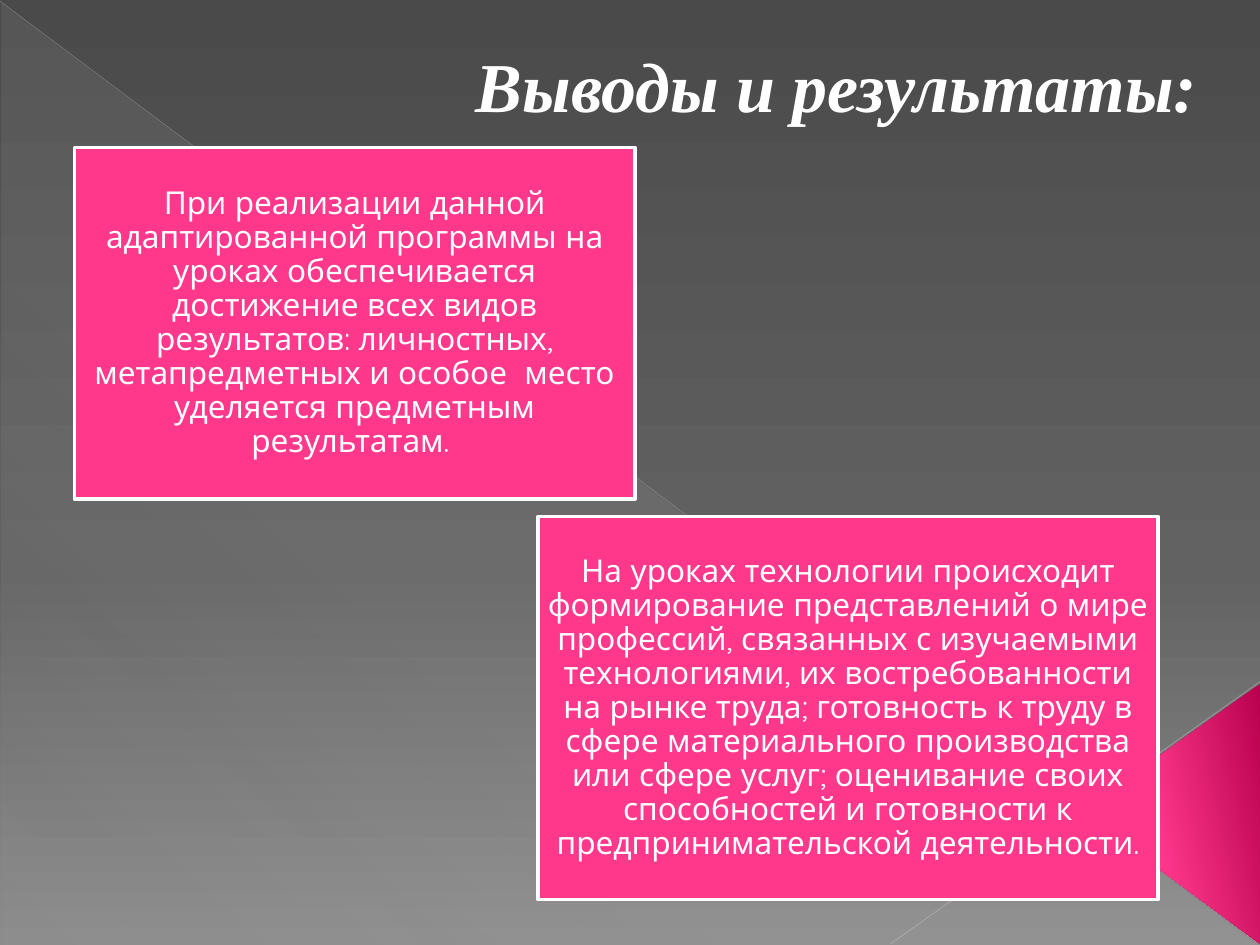
from lxml import etree
from pptx import Presentation
from pptx.dml.color import RGBColor
from pptx.enum import shapes, text
from pptx.oxml.ns import qn
from pptx.util import Inches, Pt

COLORS = {"white": "FFFFFF", "pink": "FF388C", "rose": "B8014E", "blush": "FF9CB9",
          "dark": "4A4A4A", "mid": "626262", "light": "8C8C8C", "veil": "D2D2D2",
          "falling": "BFBFBF", "rising": "C6C6C6"}

TITLE = "Выводы и результаты:"
CARDS = [
    ((0.59, 1.17, 4.45, 2.79),
     "При реализации данной адаптированной программы на уроках обеспечивается "
     "достижение всех видов результатов: личностных, метапредметных и особое  место "
     "уделяется предметным результатам. "),
    ((4.27, 4.1, 4.92, 3.04),
     "На уроках технологии происходит формирование представлений о мире профессий, "
     "связанных с изучаемыми технологиями, их востребованности на рынке труда; "
     "готовность к труду в сфере материального производства или сфере услуг; "
     "оценивание своих способностей и готовности к предпринимательской деятельности."),
]
# start, end, colour, width in points, opacity in percent
DIAGONALS = [((0, 0.01), (9.99, 7.49), "falling", 0.39, 35),
             ((10, 5.41), (7.07, 7.49), "rising", 0.47, 45)]
# position %, colour, opacity %
BACKGROUND_STOPS = [(0, "dark", 100), (60, "mid", 100), (100, "light", 100)]
VEIL_STOPS = [(0, "veil", 10), (70, "veil", 8), (100, "veil", 1)]
CORNER_STOPS = [(0, "rose", 100), (60, "pink", 100), (100, "blush", 100)]


def rgb(name):
    return RGBColor.from_string(COLORS[name])


def set_opacity(color_element, percent):
    etree.SubElement(color_element, qn("a:alpha"), val=str(percent * 1000))


def set_gradient(fill, owner, stops, angle):
    """Fill with any number of stops; the angle runs clockwise."""
    fill.gradient()
    fill.gradient_angle = 360 - angle
    stop_list = owner.find(".//" + qn("a:gsLst"))
    for old_stop in list(stop_list):
        stop_list.remove(old_stop)
    for position, name, opacity in stops:
        stop = etree.SubElement(stop_list, qn("a:gs"), pos=str(position * 1000))
        color = etree.SubElement(stop, qn("a:srgbClr"), val=COLORS[name])
        if opacity < 100:
            set_opacity(color, opacity)


def add_shape(slide, kind, box):
    shape = slide.shapes.add_shape(kind, *map(Inches, box))
    shape.shadow.inherit = False
    shape.line.fill.background()
    return shape


def add_diagonal(slide, start, end, color, width, opacity):
    line = slide.shapes.add_connector(shapes.MSO_CONNECTOR.STRAIGHT,
                                      *map(Inches, start + end))
    line.line.color.rgb = rgb(color)
    line.line.width = Pt(width)
    properties = line._element.spPr
    set_opacity(properties.find(".//" + qn("a:srgbClr")), opacity)
    etree.SubElement(properties, qn("a:effectLst"))


def add_run(paragraph, words, font_name, size):
    run = paragraph.add_run()
    run.text = words
    run.font.name = font_name
    run.font.size = Pt(size)
    run.font.color.rgb = rgb("white")
    return run


def add_title(slide):
    frame = slide.shapes.add_textbox(*map(Inches, (0.91, 0.29, 8.74, 6.93))).text_frame
    frame.word_wrap = True
    frame.margin_right = Inches(0.15)
    paragraph = frame.paragraphs[0]
    paragraph.alignment = text.PP_ALIGN.RIGHT
    run = add_run(paragraph, TITLE, "Times New Roman", 40)
    run.font.bold = run.font.italic = True


def add_card(slide, box, words):
    card = add_shape(slide, shapes.MSO_SHAPE.RECTANGLE, box)
    card.fill.solid()
    card.fill.fore_color.rgb = rgb("pink")
    card.line.color.rgb = rgb("white")
    card.line.width = Pt(2)
    frame = card.text_frame
    frame.word_wrap = True
    frame.vertical_anchor = text.MSO_ANCHOR.MIDDLE
    frame.margin_left = frame.margin_right = Inches(0.07)
    frame.margin_top = frame.margin_bottom = Inches(0.07)
    paragraph = frame.paragraphs[0]
    paragraph.alignment = text.PP_ALIGN.CENTER
    paragraph.line_spacing = 0.9
    add_run(paragraph, words, "Quicksand", 18)


def main():
    presentation = Presentation()
    presentation.slide_width, presentation.slide_height = Inches(10), Inches(7.5)
    slide = presentation.slides.add_slide(presentation.slide_layouts[6])
    set_gradient(slide.background.fill, slide.element, BACKGROUND_STOPS, 90)

    veil = add_shape(slide, shapes.MSO_SHAPE.RIGHT_TRIANGLE, (0.01, 0.02, 9.98, 7.48))
    set_gradient(veil.fill, veil._element, VEIL_STOPS, 133)
    for diagonal in DIAGONALS:
        add_diagonal(slide, *diagonal)
    corner = add_shape(slide, shapes.MSO_SHAPE.ISOSCELES_TRIANGLE, (8.26, 5.75, 2.07, 1.42))
    corner.adjustments[0] = 0.51
    corner.rotation = 270
    set_gradient(corner.fill, corner._element, CORNER_STOPS, 258)

    add_title(slide)
    for box, words in CARDS:
        add_card(slide, box, words)
    presentation.save("out.pptx")


if __name__ == "__main__":
    main()
